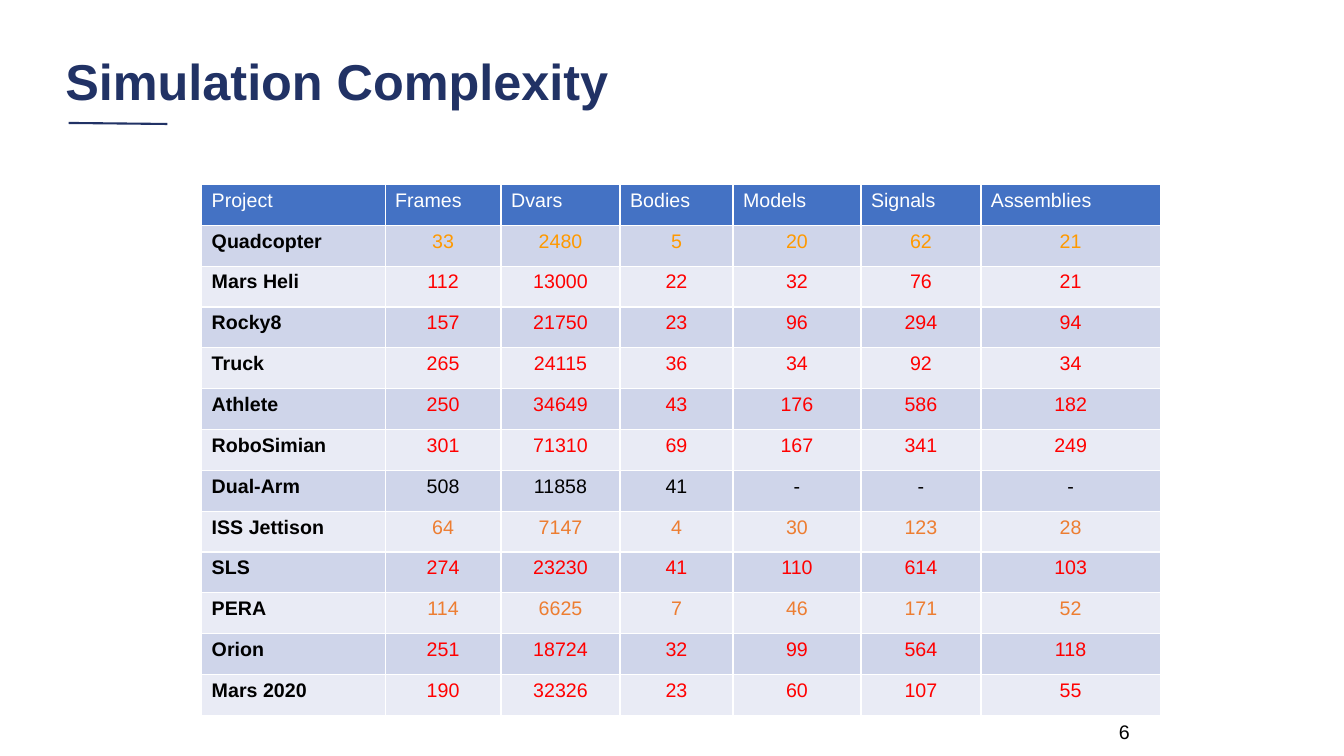
from dataclasses import dataclass

from lxml.etree import SubElement
from pptx import Presentation
from pptx.dml.color import RGBColor
from pptx.enum.shapes import MSO_CONNECTOR
from pptx.enum.text import MSO_ANCHOR, PP_ALIGN
from pptx.oxml import parse_xml
from pptx.oxml.ns import nsdecls, qn
from pptx.util import Inches, Pt


@dataclass(frozen=True)
class Theme:
    font: str = "Arial"
    navy: str = "213265"
    head: str = "4472C4"
    bands: tuple = ("CFD5EA", "E9EBF5")
    white: str = "FFFFFF"
    black: str = "000000"
    red: str = "FF0000"
    amber: str = "FF9900"
    orange: str = "ED7D31"
    title: int = 36
    body: int = 14
    rule: float = 1.5
    grid: int = 1


THEME = Theme()
HEADS = ("Project", "Frames", "Dvars", "Bodies", "Models", "Signals", "Assemblies")
WIDTHS = (1.82, 1.15, 1.18, 1.12, 1.27, 1.19, 1.78)
ROWS = (
    ("Quadcopter", THEME.amber, (33, 2480, 5, 20, 62, 21)),
    ("Mars Heli", THEME.red, (112, 13000, 22, 32, 76, 21)),
    ("Rocky8", THEME.red, (157, 21750, 23, 96, 294, 94)),
    ("Truck", THEME.red, (265, 24115, 36, 34, 92, 34)),
    ("Athlete", THEME.red, (250, 34649, 43, 176, 586, 182)),
    ("RoboSimian", THEME.red, (301, 71310, 69, 167, 341, 249)),
    ("Dual-Arm", THEME.black, (508, 11858, 41, "-", "-", "-")),
    ("ISS Jettison", THEME.orange, (64, 7147, 4, 30, 123, 28)),
    ("SLS", THEME.red, (274, 23230, 41, 110, 614, 103)),
    ("PERA", THEME.orange, (114, 6625, 7, 46, 171, 52)),
    ("Orion", THEME.red, (251, 18724, 32, 99, 564, 118)),
    ("Mars 2020", THEME.red, (190, 32326, 23, 60, 107, 55)),
)


def write(frame, text, size, color, bold=False):
    frame.text = str(text)
    para = frame.paragraphs[0]
    font = para.runs[0].font
    font.name, font.size, font.bold = THEME.font, Pt(size), bold
    font.color.rgb = RGBColor.from_string(color)
    return para


def add_text(slide, box, *style):
    frame = slide.shapes.add_textbox(*map(Inches, box)).text_frame
    frame.word_wrap = True
    return frame, write(frame, *style)


def add_title(slide, box):
    """Place the heading and the short rule below it."""
    left, top, width, height = box
    frame, para = add_text(slide, box, "Simulation Complexity",
                           THEME.title, THEME.navy, True)
    frame.vertical_anchor = MSO_ANCHOR.MIDDLE
    para.line_spacing = 0.9
    start, base = left + 0.13, top + height
    rule = slide.shapes.add_connector(
        MSO_CONNECTOR.STRAIGHT, Inches(start), Inches(base),
        Inches(start + 0.98), Inches(base + 0.01))
    rule.line.color.rgb = RGBColor.from_string(THEME.navy)
    rule.line.width = Pt(THEME.rule)
    SubElement(rule._element.spPr, qn("a:effectLst"))


def fill_cell(cell, text, color, fill, bold=False, align=PP_ALIGN.LEFT):
    write(cell.text_frame, text, THEME.body, color, bold).alignment = align
    props = cell._tc.get_or_add_tcPr()
    for side in "LRTB":
        props.append(parse_xml(
            f'<a:ln{side} {nsdecls("a")} w="{Pt(THEME.grid)}"><a:solidFill>'
            f'<a:srgbClr val="{THEME.white}"/></a:solidFill></a:ln{side}>'))
    cell.fill.solid()
    cell.fill.fore_color.rgb = RGBColor.from_string(fill)


def add_grid(slide, box):
    """Place the table of projects, with rows of equal height."""
    count = len(ROWS) + 1
    table = slide.shapes.add_table(count, len(HEADS), *map(Inches, box)).table
    for col, width in zip(table.columns, WIDTHS):
        col.width = Inches(width)
    for row in table.rows:
        row.height = Inches(box[3] / count)
    for col, text in enumerate(HEADS):
        fill_cell(table.cell(0, col), text, THEME.white, THEME.head)
    for row, (name, color, values) in enumerate(ROWS, 1):
        fill = THEME.bands[(row - 1) % 2]
        fill_cell(table.cell(row, 0), name, THEME.black, fill, True)
        for col, value in enumerate(values, 1):
            fill_cell(table.cell(row, col), value, color, fill,
                      align=PP_ALIGN.CENTER)


def main():
    deck = Presentation()
    deck.slide_width, deck.slide_height = Inches(13.33), Inches(7.5)
    slide = deck.slides.add_slide(deck.slide_layouts[6])
    add_title(slide, (0.55, 0.46, 11.12, 0.76))
    add_grid(slide, (2, 1.83, 9.5, 5.27))
    add_text(slide, (11, 7.09, 0.67, 0.34), 6, THEME.body, THEME.black)
    deck.save("out.pptx")


if __name__ == "__main__":
    main()
